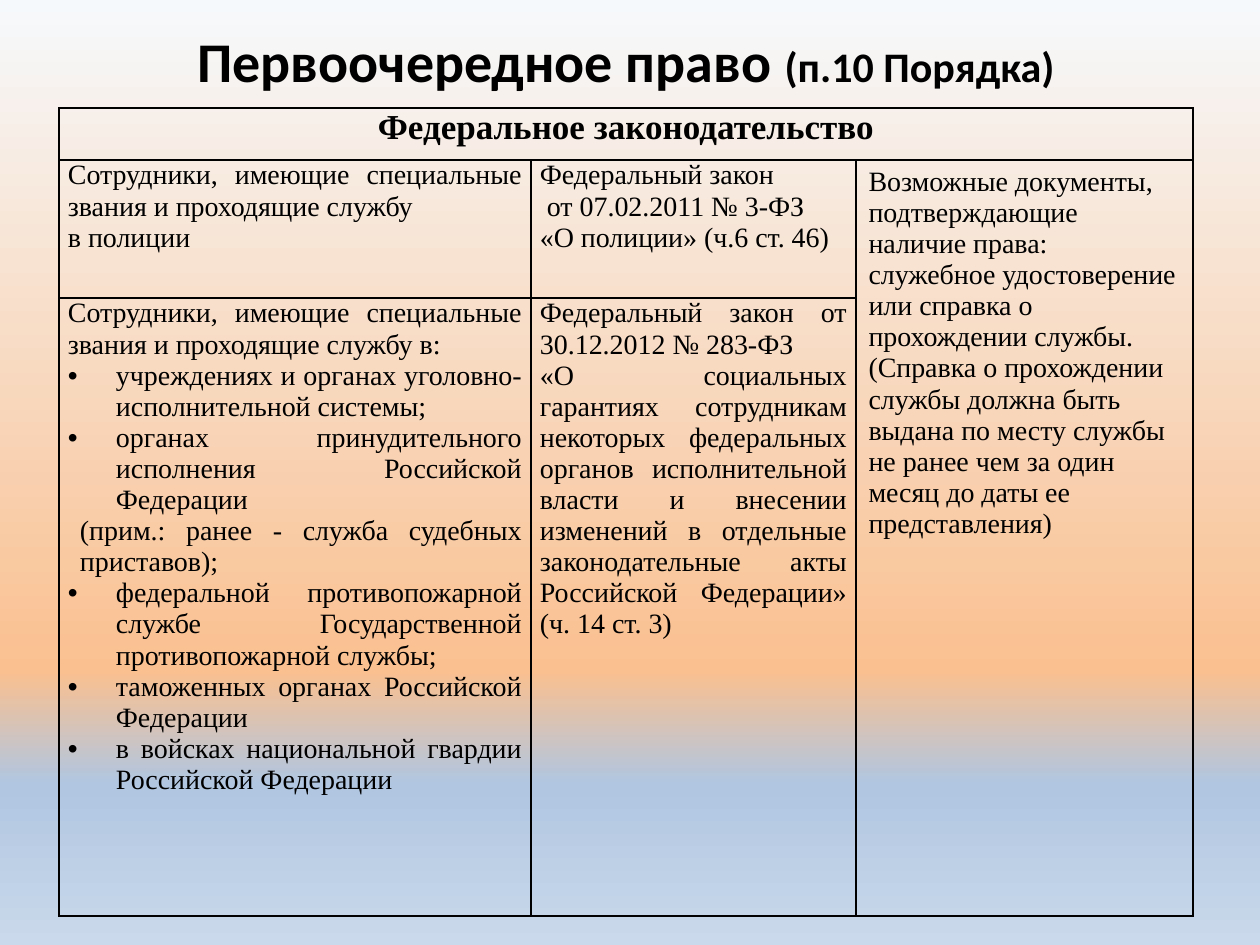
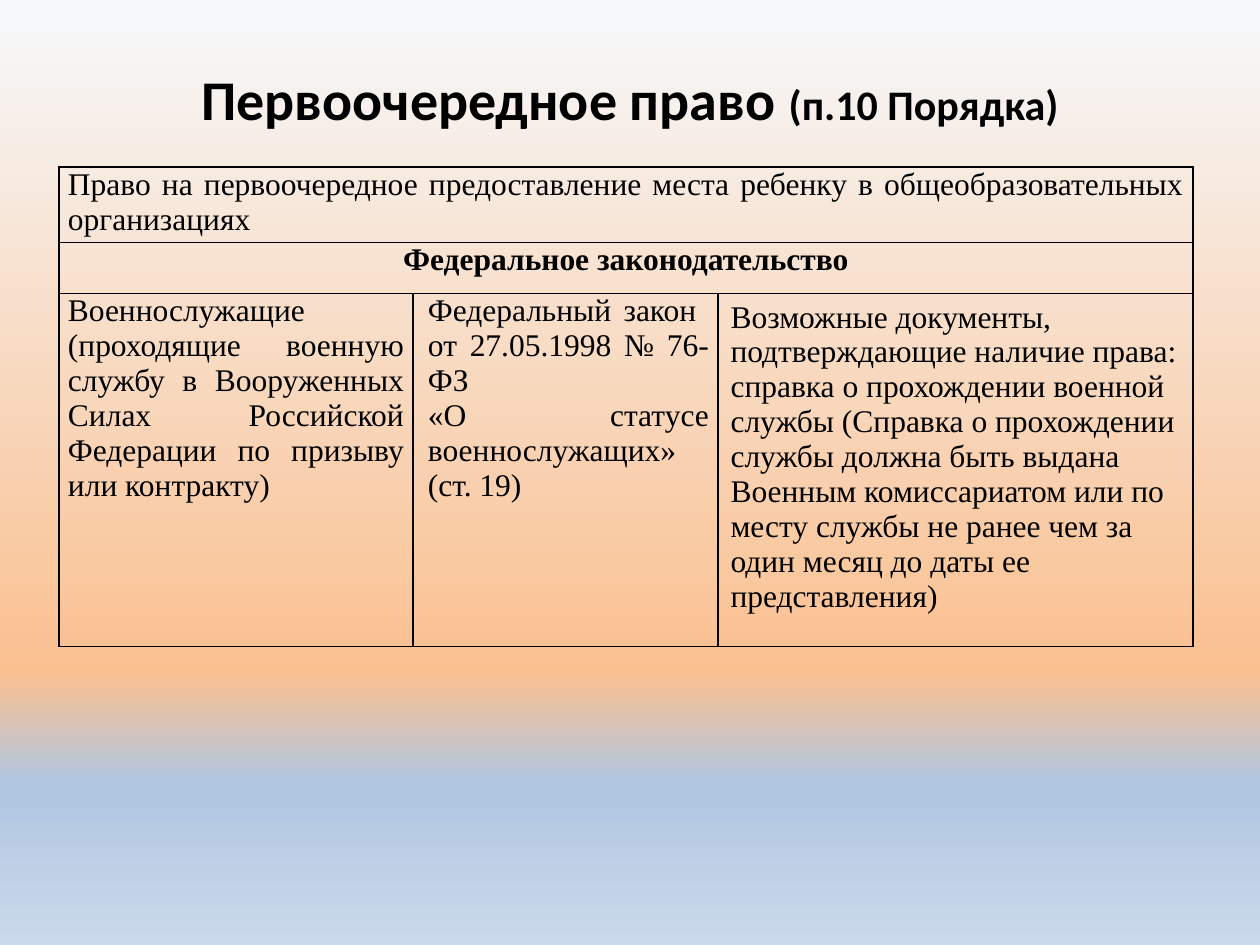
"""Build two slides on the priority right to a school place."""
from lxml.etree import SubElement as Sub
from pptx import Presentation
from pptx.dml.color import RGBColor as RGB
from pptx.enum.text import MSO_ANCHOR as Anchor, PP_ALIGN as Align
from pptx.oxml.ns import qn
from pptx.util import Pt

PX = 914400 / 126
BLACK = RGB(0, 0, 0)
STOPS = [
    (0, RGB(0xF6, 0xF9, 0xFC)),
    (71, RGB(0xFA, 0xC0, 0x90)),
    (83, RGB(0xB0, 0xC6, 0xE1)),
    (100, RGB(0xCA, 0xD9, 0xEB)),
]
SERIF, SANS = "Times New Roman", "Calibri"
HEAD = "Федеральное законодательство"
TITLE = [("Первоочередное право ", 32), ("(п.10 Порядка)", 24)]
INDENTS = {"•": (48, -48), "+": (12, 0), "-": (6, 0)}

POLICE = [
    "Сотрудники, имеющие специальные звания и проходящие службу",
    "в полиции",
]
POLICE_LAW = [
    "Федеральный закон",
    " от 07.02.2011 № 3-ФЗ",
    "«О полиции» (ч.6 ст. 46)",
]
PROOF = [
    "Возможные документы, подтверждающие наличие права: служебное "
    "удостоверение или справка о прохождении службы.",
    "(Справка о прохождении службы должна быть выдана по месту службы "
    "не ранее чем за один месяц до даты ее представления)",
]
STAFF = [
    "Сотрудники, имеющие специальные звания и проходящие службу в:",
    "•учреждениях и органах уголовно-исполнительной системы;",
    "•органах принудительного исполнения Российской Федерации ",
    "+(прим.: ранее - служба судебных приставов); ",
    "•федеральной противопожарной службе Государственной "
    "противопожарной службы; ",
    "•таможенных органах Российской Федерации",
    "•в войсках национальной гвардии Российской Федерации",
]
STAFF_LAW = [
    "Федеральный закон от 30.12.2012 № 283-ФЗ ",
    "«О социальных гарантиях сотрудникам некоторых федеральных органов "
    "исполнительной власти и внесении изменений в отдельные "
    "законодательные акты Российской Федерации» (ч. 14 ст. 3)",
]
RIGHT = [
    "Право на первоочередное предоставление места ребенку "
    "в общеобразовательных организациях "
]
ARMY = [
    "Военнослужащие ",
    "(проходящие военную службу в Вооруженных Силах Российской Федерации "
    "по призыву или контракту)",
]
ARMY_LAW = [
    "-Федеральный закон \vот 27.05.1998 № 76-ФЗ ",
    "-«О статусе военнослужащих» (ст. 19)",
]
ARMY_PROOF = [
    "Возможные документы, подтверждающие наличие права: справка "
    "о прохождении военной службы (Справка о прохождении службы должна "
    "быть выдана Военным комиссариатом или по месту службы не ранее чем "
    "за один месяц до даты ее представления)"
]

SLIDES = [
    dict(
        title=(59, 0), top=108, size=16, big=20,
        cols=[472, 325, 337], rows=[52, 138, 618],
        spans=[(0, 0, 0, 2), (1, 2, 2, 2)],
        cells=[[[HEAD]], [POLICE, POLICE_LAW, PROOF], [STAFF, STAFF_LAW]],
    ),
    dict(
        title=(63, 38), top=167, size=18, big=18,
        cols=[354, 305, 475], rows=[70, 51, 326],
        spans=[(0, 0, 0, 2), (1, 0, 1, 2)],
        cells=[[RIGHT], [[HEAD]], [ARMY, ARMY_LAW, ARMY_PROOF]],
    ),
]


def px(*sides):
    return [round(side * PX) for side in sides]


def style(run, font, size, bold):
    run.font.name, run.font.size, run.font.bold = font, Pt(size), bold
    run.font.color.rgb = BLACK


deck = Presentation()
deck.slide_width, deck.slide_height = px(1260, 945)

for data in SLIDES:
    slide = deck.slides.add_slide(deck.slide_layouts[6])
    back = slide.background.fill
    back.gradient()
    back.gradient_angle = 270
    stops = slide.element.find(".//" + qn("a:gsLst"))
    stops.clear()
    for place, color in STOPS:
        stop = Sub(stops, qn("a:gs"), pos=str(place * 1000))
        Sub(stop, qn("a:srgbClr"), val=str(color))

    frame = slide.shapes.add_textbox(*px(*data["title"], 1134, 120)).text_frame
    frame.word_wrap = True
    frame.vertical_anchor = Anchor.MIDDLE
    para = frame.paragraphs[0]
    para.alignment = Align.CENTER
    for text, size in TITLE:
        run = para.add_run()
        run.text = text
        style(run, SANS, size, True)

    cols, rows = data["cols"], data["rows"]
    box = px(59, data["top"], sum(cols), sum(rows))
    table = slide.shapes.add_table(len(rows), len(cols), *box).table
    table.first_row = table.horz_banding = False
    for col, width in zip(table.columns, px(*cols)):
        col.width = width
    for row, height in zip(table.rows, px(*rows)):
        row.height = height
    for r1, c1, r2, c2 in data["spans"]:
        table.cell(r1, c1).merge(table.cell(r2, c2))

    for cell in table.iter_cells():
        props = cell._tc.get_or_add_tcPr()
        for side in "LRTB":
            line = Sub(props, qn("a:ln" + side), w=str(Pt(1)))
            fill = Sub(line, qn("a:solidFill"))
            Sub(fill, qn("a:srgbClr"), val=str(BLACK))
        cell.fill.background()

    for r, row in enumerate(data["cells"]):
        for c, lines in enumerate(row):
            cell = table.cell(r, c)
            head = lines == [HEAD]
            align = Align.CENTER if head else Align.JUSTIFY
            if c == 2:
                align = Align.LEFT
            else:
                cell.margin_left = cell.margin_right = px(9)[0]
                cell.margin_top = cell.margin_bottom = 0
            cell.text = "\n".join(
                text[1:] if text[0] in INDENTS else text for text in lines
            )
            for para, text in zip(cell.text_frame.paragraphs, lines):
                para.alignment = align
                for run in para.runs:
                    style(run, SERIF, data["big" if head else "size"], head)
                if text[0] in INDENTS:
                    left, first = px(*INDENTS[text[0]])
                    props = para._p.get_or_add_pPr()
                    props.set("marL", str(left))
                    props.set("indent", str(first))
                    if text[0] == "•":
                        Sub(props, qn("a:buFont"), typeface="Arial")
                        Sub(props, qn("a:buChar"), char="•")

deck.save("out.pptx")
